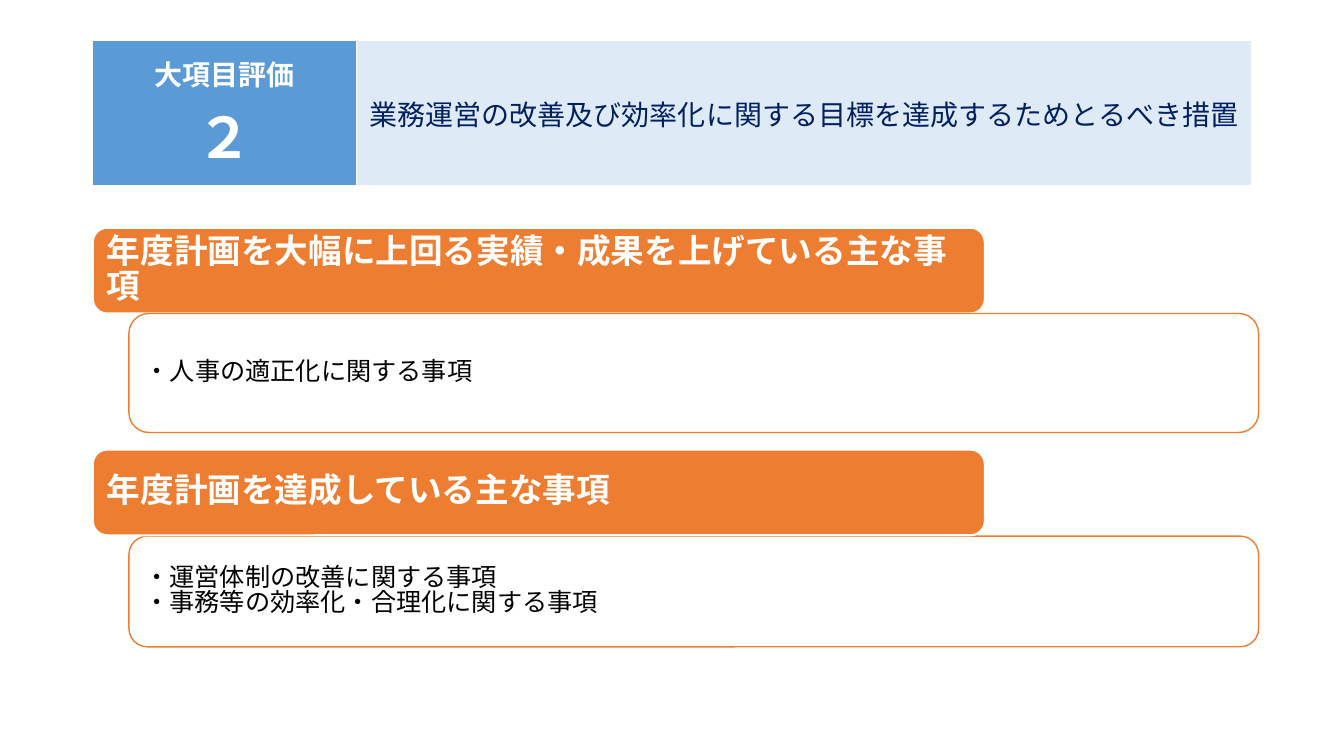
from lxml.etree import SubElement
from pptx import Presentation
from pptx.dml.color import RGBColor
from pptx.enum.lang import MSO_LANGUAGE_ID as Language
from pptx.enum.shapes import MSO_SHAPE as Shape
from pptx.enum.text import MSO_ANCHOR as Anchor, PP_ALIGN as Align
from pptx.oxml.ns import qn
from pptx.util import Cm, Pt

ORANGE, WHITE, BLACK = "ED7D31", "FFFFFF", "000000"
BLUE, PALE_BLUE, NAVY = "5B9BD5", "DEEBF7", "002060"
JAPANESE_FONT = "Noto Sans CJK JP"


def paint(target, color):
    """Give a fill, line fill or font fill one solid colour."""
    target.solid()
    target.fore_color.rgb = RGBColor.from_string(color)


def write_line(frame, index, text, size, color, bold, align, font_name, spacing):
    """Write one paragraph of a text frame."""
    para = frame.add_paragraph() if index else frame.paragraphs[0]
    para.text = text
    para.alignment = align
    para.line_spacing = spacing
    font = para.font
    font.size, font.bold, font.name = Pt(size), bold, font_name
    font.language_id = Language.JAPANESE
    paint(font.fill, color)
    defaults = para._p.pPr.find(qn("a:defRPr"))
    SubElement(defaults, qn("a:ea"), typeface=JAPANESE_FONT)


deck = Presentation()
deck.slide_width, deck.slide_height = Cm(33.87), Cm(19.05)
page = deck.slides.add_slide(deck.slide_layouts[6])

# Heading table: number on the left, goal on the right
table = page.shapes.add_table(1, 2, Cm(2.34), Cm(1.02), Cm(29.21), Cm(3.68)).table
heading_cells = [
    (6.65, BLUE, WHITE, True, [("大項目評価", 20), ("２", 40)]),
    (22.56, PALE_BLUE, NAVY, False,
     [("業務運営の改善及び効率化に関する目標を達成するためとるべき措置", 20)]),
]
for column, (width, fill, color, bold, lines) in enumerate(heading_cells):
    table.columns[column].width = Cm(width)
    cell = table.cell(0, column)
    cell.vertical_anchor = Anchor.MIDDLE
    cell.margin_left = cell.margin_right = Cm(0.1)
    cell.margin_top = cell.margin_bottom = 0
    for index, (text, size) in enumerate(lines):
        write_line(cell.text_frame, index, text, size, color, bold,
                   Align.CENTER, "Calibri", 1.0)
    # White borders come before the fill in the cell properties
    properties = cell._tc.get_or_add_tcPr()
    for side, points in (("L", 1), ("R", 1), ("T", 1), ("B", 3)):
        border = SubElement(properties, qn(f"a:ln{side}"), w=str(Pt(points)))
        border_fill = SubElement(border, qn("a:solidFill"))
        SubElement(border_fill, qn("a:srgbClr"), val=WHITE)
    paint(cell.fill, fill)

# Section bars and their item boxes, from back to front
bar = dict(left=2.34, width=22.48, fill=ORANGE, line=WHITE, weight=1.5,
           size=24, color=WHITE, bold=True, spacing=0.86)
item_box = dict(left=3.25, width=28.47, fill=WHITE, line=ORANGE, weight=1,
                size=18, color=BLACK, bold=False, spacing=0.82)
panels = [
    (item_box, 13.51, 2.79, ["・運営体制の改善に関する事項",
                             "・事務等の効率化・合理化に関する事項"]),
    (bar, 11.33, 2.16, ["年度計画を達成している主な事項"]),
    (bar, 5.74, 2.16, ["年度計画を大幅に上回る実績・成果を上げている主な事項"]),
    (item_box, 7.9, 3, ["・人事の適正化に関する事項"]),
]
for style, top, height, lines in panels:
    panel = page.shapes.add_shape(Shape.ROUNDED_RECTANGLE, Cm(style["left"]),
                                  Cm(top), Cm(style["width"]), Cm(height))
    panel.shadow.inherit = False
    paint(panel.fill, style["fill"])
    paint(panel.line.fill, style["line"])
    panel.line.width = Pt(style["weight"])
    frame = panel.text_frame
    frame.word_wrap = True
    frame.vertical_anchor = Anchor.MIDDLE
    for index, text in enumerate(lines):
        write_line(frame, index, text, style["size"], style["color"],
                   style["bold"], Align.LEFT, JAPANESE_FONT, style["spacing"])

deck.save("out.pptx")
